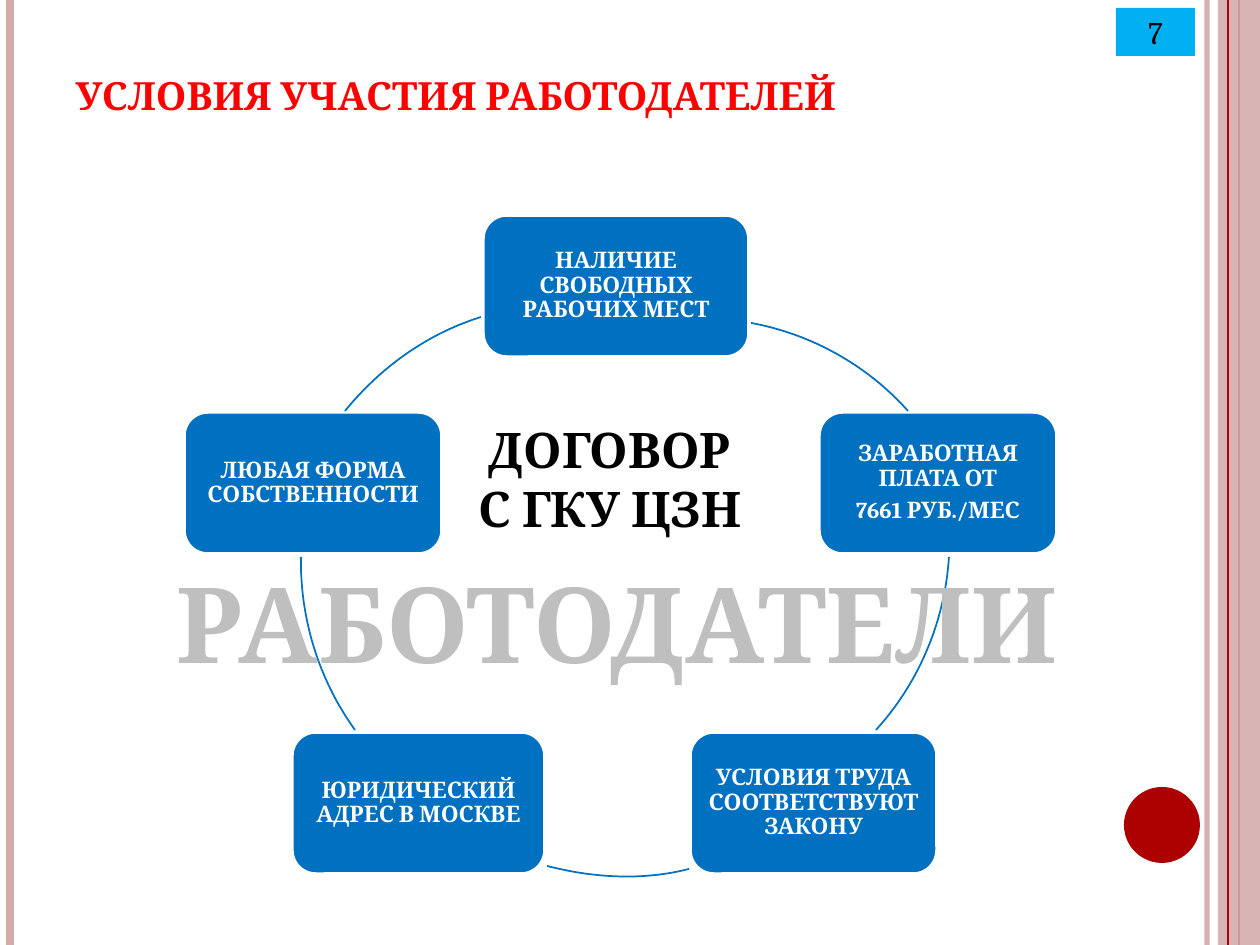
from dataclasses import dataclass
from typing import NamedTuple

from lxml.etree import SubElement
from pptx import Presentation
from pptx.dml.color import RGBColor
from pptx.enum.shapes import MSO_CONNECTOR, MSO_SHAPE as SHAPE
from pptx.enum.text import MSO_ANCHOR as ANCHOR, PP_ALIGN as ALIGN
from pptx.oxml.ns import qn
from pptx.util import Emu, Pt

PX = 914400 / 126


@dataclass(frozen=True)
class Theme:
    font: str = "Cambria"
    red: str = "FF0000"
    dark_red: str = "AD0101"
    pink: str = "D3ABAB"
    blue: str = "0070C0"
    cyan: str = "00B0F0"
    gray: str = "BFBFBF"
    white: str = "FFFFFF"
    black: str = "000000"
    title: float = 22.2
    condition: float = 13
    number: float = 18
    center: float = 28
    banner: float = 60


class Rect(NamedTuple):
    x: int
    y: int
    w: int
    h: int


class Condition(NamedTuple):
    rect: Rect
    lines: tuple[str, ...]


class Arc(NamedTuple):
    start: tuple[int, int]
    bend1: tuple[int, int]
    bend2: tuple[int, int]
    end: tuple[int, int]


class Rule(NamedTuple):
    x: int
    color: str
    width: float
    opacity: int = 100


T = Theme()
W, H = 1260, 945
BOX_H = 142
TOP, MIDDLE, BOTTOM = 215, 412, 732

CONDITIONS = (
    Condition(Rect(483, TOP, 266, BOX_H), ("НАЛИЧИЕ СВОБОДНЫХ РАБОЧИХ МЕСТ",)),
    Condition(Rect(819, MIDDLE, 238, BOX_H), ("ЗАРАБОТНАЯ ПЛАТА ОТ", "7661 РУБ./МЕС")),
    Condition(Rect(690, BOTTOM, 247, BOX_H), ("УСЛОВИЯ ТРУДА СООТВЕТСТВУЮТ ЗАКОНУ",)),
    Condition(Rect(292, BOTTOM, 253, BOX_H), ("ЮРИДИЧЕСКИЙ АДРЕС В МОСКВЕ",)),
    Condition(Rect(184, MIDDLE, 258, BOX_H), ("ЛЮБАЯ ФОРМА СОБСТВЕННОСТИ",)),
)
ARCS = (
    Arc((751, 323), (811, 334), (867, 365), (908, 411)),
    Arc((949, 557), (945, 621), (919, 683), (876, 730)),
    Arc((689, 869), (643, 881), (593, 878), (547, 866)),
    Arc((355, 730), (319, 680), (300, 619), (301, 557)),
    Arc((345, 411), (381, 367), (427, 334), (481, 317)),
)
BACK_RULES = (Rule(1207, T.pink, 3, 93), Rule(10, T.pink, 4.5), Rule(1239, T.dark_red, 1.5))
FRONT_RULES = (Rule(1228, T.dark_red, 0.75),)


def px(value: float) -> Emu:
    return Emu(round(value * PX))


def rgb(color: str) -> RGBColor:
    return RGBColor.from_string(color)


def set_opacity(sp, percent: int) -> None:
    if percent < 100:
        for clr in sp._element.spPr.iter(qn("a:srgbClr")):
            SubElement(clr, qn("a:alpha")).set("val", str(percent * 1000))


def write(sp, *lines: str, size: float, color: str, bold: bool = True, align=ALIGN.CENTER,
          anchor=ANCHOR.TOP, inset: tuple[int, int] | None = None,
          spacing: float = 1.0, after: float = 0) -> None:
    tf = sp.text_frame
    tf.word_wrap = True
    tf.vertical_anchor = anchor
    if inset is not None:
        tf.margin_left = tf.margin_right = px(inset[0])
        tf.margin_top = tf.margin_bottom = px(inset[1])
    for i, line in enumerate(lines):
        p = tf.add_paragraph() if i else tf.paragraphs[0]
        p.alignment, p.line_spacing = align, spacing
        p.space_after = Pt(after)
        r = p.add_run()
        r.text = line
        f = r.font
        f.name, f.size, f.bold = T.font, Pt(size), bold
        f.color.rgb = rgb(color)


def add_box(slide, kind, rect: Rect, fill: str, line: str | None = None, opacity: int = 100):
    sp = slide.shapes.add_shape(kind, *map(px, rect))
    sp.shadow.inherit = False
    sp.fill.solid()
    sp.fill.fore_color.rgb = rgb(fill)
    set_opacity(sp, opacity)
    if line:
        sp.line.color.rgb = rgb(line)
        sp.line.width = Pt(2)
    else:
        sp.line.fill.background()
    return sp


def add_rule(slide, rule: Rule) -> None:
    cn = slide.shapes.add_connector(MSO_CONNECTOR.STRAIGHT, px(rule.x), 0, px(rule.x), px(H))
    cn.line.color.rgb = rgb(rule.color)
    cn.line.width = Pt(rule.width)
    set_opacity(cn, rule.opacity)
    SubElement(cn._element.spPr, qn("a:effectLst"))


def add_arc(slide, arc: Arc, steps: int = 24) -> None:
    def point(t: float) -> tuple[Emu, Emu]:
        u = 1 - t
        weights = (u**3, 3 * u * u * t, 3 * u * t * t, t**3)
        x, y = (px(sum(k * v for k, v in zip(weights, axis))) for axis in zip(*arc))
        return x, y

    fb = slide.shapes.build_freeform(*point(0))
    fb.add_line_segments([point(i / steps) for i in range(1, steps + 1)], close=False)
    sp = fb.convert_to_shape()
    sp.shadow.inherit = False
    sp.fill.background()
    sp.line.color.rgb = rgb(T.blue)
    sp.line.width = Pt(1)


def add_label(slide, rect: Rect, *lines: str, **fmt) -> None:
    write(slide.shapes.add_textbox(*map(px, rect)), *lines, **fmt)


def main() -> None:
    """Build the slide on the conditions for employers."""
    prs = Presentation()
    prs.slide_width, prs.slide_height = px(W), px(H)
    slide = prs.slides.add_slide(prs.slide_layouts[5])

    for rule in BACK_RULES:
        add_rule(slide, rule)
    add_box(slide, SHAPE.RECTANGLE, Rect(1218, 0, 42, H), T.pink, opacity=87)
    for rule in FRONT_RULES:
        add_rule(slide, rule)
    add_box(slide, SHAPE.OVAL, Rect(1124, 787, 76, 76), T.dark_red)

    for rect, lines in CONDITIONS:
        sp = add_box(slide, SHAPE.ROUNDED_RECTANGLE, rect, T.blue, T.white)
        write(sp, *lines, size=T.condition, color=T.white, anchor=ANCHOR.MIDDLE,
              inset=(0, 0), spacing=0.9, after=4.5)
    for arc in ARCS:
        add_arc(slide, arc)

    add_label(slide, Rect(0, 552, 1235, 140), "РАБОТОДАТЕЛИ", size=T.banner, color=T.gray)
    add_label(slide, Rect(441, 413, 338, 131), "ДОГОВОР", "С ГКУ ЦЗН",
              size=T.center, color=T.black)

    title = slide.shapes.title
    title.left, title.top, title.width, title.height = map(px, Rect(63, 38, 864, 87))
    write(title, "УСЛОВИЯ УЧАСТИЯ РАБОТОДАТЕЛЕЙ", size=T.title, color=T.red,
          align=ALIGN.LEFT, anchor=ANCHOR.BOTTOM)

    number = add_box(slide, SHAPE.RECTANGLE, Rect(1116, 8, 79, 48), T.cyan)
    write(number, "7", size=T.number, color=T.black, bold=False, anchor=ANCHOR.MIDDLE)
    prs.save("out.pptx")


if __name__ == "__main__":
    main()
